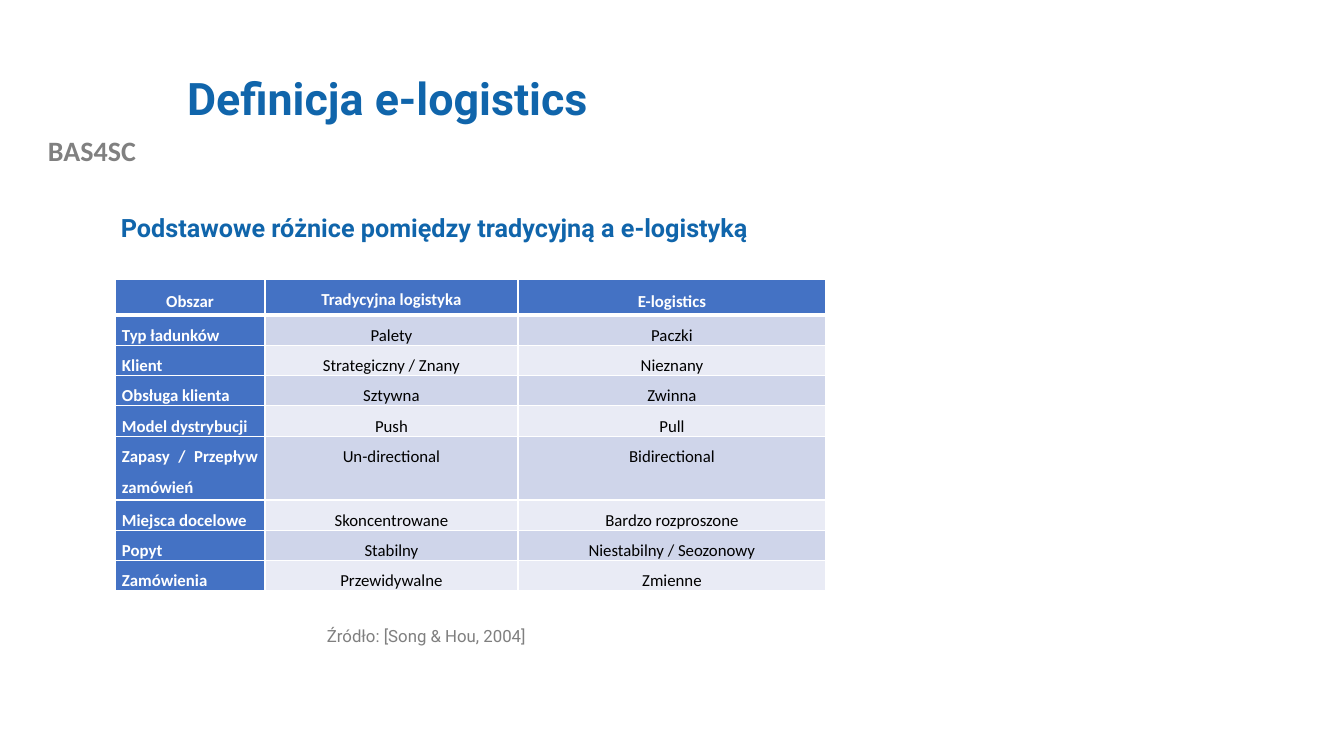
from lxml import etree
from pptx import Presentation
from pptx.dml.color import RGBColor
from pptx.enum.text import MSO_ANCHOR, MSO_AUTO_SIZE, PP_ALIGN
from pptx.oxml.ns import qn
from pptx.util import Pt

PX = 914400 / 100.8
LEFT, CENTER, JUSTIFY = PP_ALIGN.LEFT, PP_ALIGN.CENTER, PP_ALIGN.JUSTIFY
TOP, MIDDLE = MSO_ANCHOR.TOP, MSO_ANCHOR.MIDDLE
NO_AUTOFIT = MSO_AUTO_SIZE.NONE

TITLE_BLUE = RGBColor(0x10, 0x65, 0xAB)
LABEL_GRAY = RGBColor(0x80, 0x80, 0x80)
SOURCE_GRAY = RGBColor(0x7F, 0x7F, 0x7F)
HEADER_BLUE = RGBColor(0x44, 0x72, 0xC4)
BAND_DARK = RGBColor(0xCF, 0xD5, 0xEA)
BAND_LIGHT = RGBColor(0xE9, 0xEB, 0xF5)
WHITE = RGBColor(0xFF, 0xFF, 0xFF)
BLACK = RGBColor(0x00, 0x00, 0x00)


def px(length):
    return round(length * PX)


def write(text_frame, text, font_name, size, color, bold, alignment, line_spacing):
    paragraph = text_frame.paragraphs[0]
    paragraph.alignment = alignment
    paragraph.line_spacing = line_spacing
    run = paragraph.add_run()
    run.text = text
    run.font.color.rgb = color
    for name, value in {"name": font_name, "size": Pt(size), "bold": bold}.items():
        setattr(run.font, name, value)
    return paragraph


presentation = Presentation()
presentation.slide_width = px(1344)
presentation.slide_height = px(756)
slide = presentation.slides.add_slide(presentation.slide_layouts[5])

title = slide.shapes.title
title_box = {"left": 177, "top": 40, "width": 1075, "height": 123}
for name, value in title_box.items():
    setattr(title, name, px(value))
title.text_frame.auto_size = NO_AUTOFIT
title.text_frame.vertical_anchor = MIDDLE
write(title.text_frame, "Definicja e-logistics", "Roboto", 32, TITLE_BLUE, True, LEFT, 0.9)

text_boxes = [
    ((0, 129, 184, 44), ("BAS4SC", "Calibri", 20, LABEL_GRAY, True, CENTER, 1.0)),
    ((111, 207, 781, 40), ("Podstawowe różnice pomiędzy tradycyjną a e-logistyką",
                           "Roboto", 18, TITLE_BLUE, True, LEFT, 1.0)),
    ((317, 623, 369, 52), ("Źródło: [Song & Hou, 2004]",
                           "Roboto", 12, SOURCE_GRAY, False, LEFT, 0.9)),
]
for position, content in text_boxes:
    text_box = slide.shapes.add_textbox(*map(px, position))
    text_box.text_frame.word_wrap = True
    write(text_box.text_frame, *content)

comparison = [
    ("Obszar", "Tradycyjna logistyka", "E-logistics"),
    ("Typ ładunków", "Palety", "Paczki"),
    ("Klient", "Strategiczny / Znany", "Nieznany"),
    ("Obsługa klienta", "Sztywna", "Zwinna"),
    ("Model dystrybucji", "Push", "Pull"),
    ("Zapasy / Przepływ zamówień", "Un-directional", "Bidirectional"),
    ("Miejsca docelowe", "Skoncentrowane", "Bardzo rozproszone"),
    ("Popyt", "Stabilny", "Niestabilny / Seozonowy"),
    ("Zamówienia", "Przewidywalne", "Zmienne"),
]
column_widths = [150, 253, 308]
row_heights = [36, 30, 30, 30, 30, 64, 30, 30, 30]
table = slide.shapes.add_table(
    len(row_heights), len(column_widths),
    px(115), px(279), px(sum(column_widths)), px(sum(row_heights)),
).table
table.first_col = True
for column, width in zip(table.columns, column_widths):
    column.width = px(width)
for row, height in zip(table.rows, row_heights):
    row.height = px(height)

cell_margins = {"margin_left": px(7), "margin_right": px(7), "margin_top": 0, "margin_bottom": 0}
for row_index, labels in enumerate(comparison):
    for column_index, label in enumerate(labels):
        cell = table.cell(row_index, column_index)
        is_header = row_index == 0
        is_label = is_header or column_index == 0
        for name, value in cell_margins.items():
            setattr(cell, name, value)
        cell.vertical_anchor = MIDDLE if is_header and column_index != 1 else TOP

        border_widths = {
            "a:lnL": 1,
            "a:lnR": 1,
            "a:lnT": 3 if row_index == 1 else 1,
            "a:lnB": 3 if is_header else 1,
        }
        properties = cell._tc.get_or_add_tcPr()
        for tag, width in border_widths.items():
            border = etree.SubElement(properties, qn(tag), w=str(Pt(width)))
            border_fill = etree.SubElement(border, qn("a:solidFill"))
            etree.SubElement(border_fill, qn("a:srgbClr"), val=str(WHITE))

        band = BAND_DARK if row_index % 2 else BAND_LIGHT
        cell.fill.solid()
        cell.fill.fore_color.rgb = HEADER_BLUE if is_label else band
        paragraph = write(
            cell.text_frame, label, "Calibri", 12, WHITE if is_label else BLACK, is_label,
            JUSTIFY if is_label and not is_header else CENTER, 1.5,
        )
        paragraph.space_after = Pt(6)

presentation.save("out.pptx")
